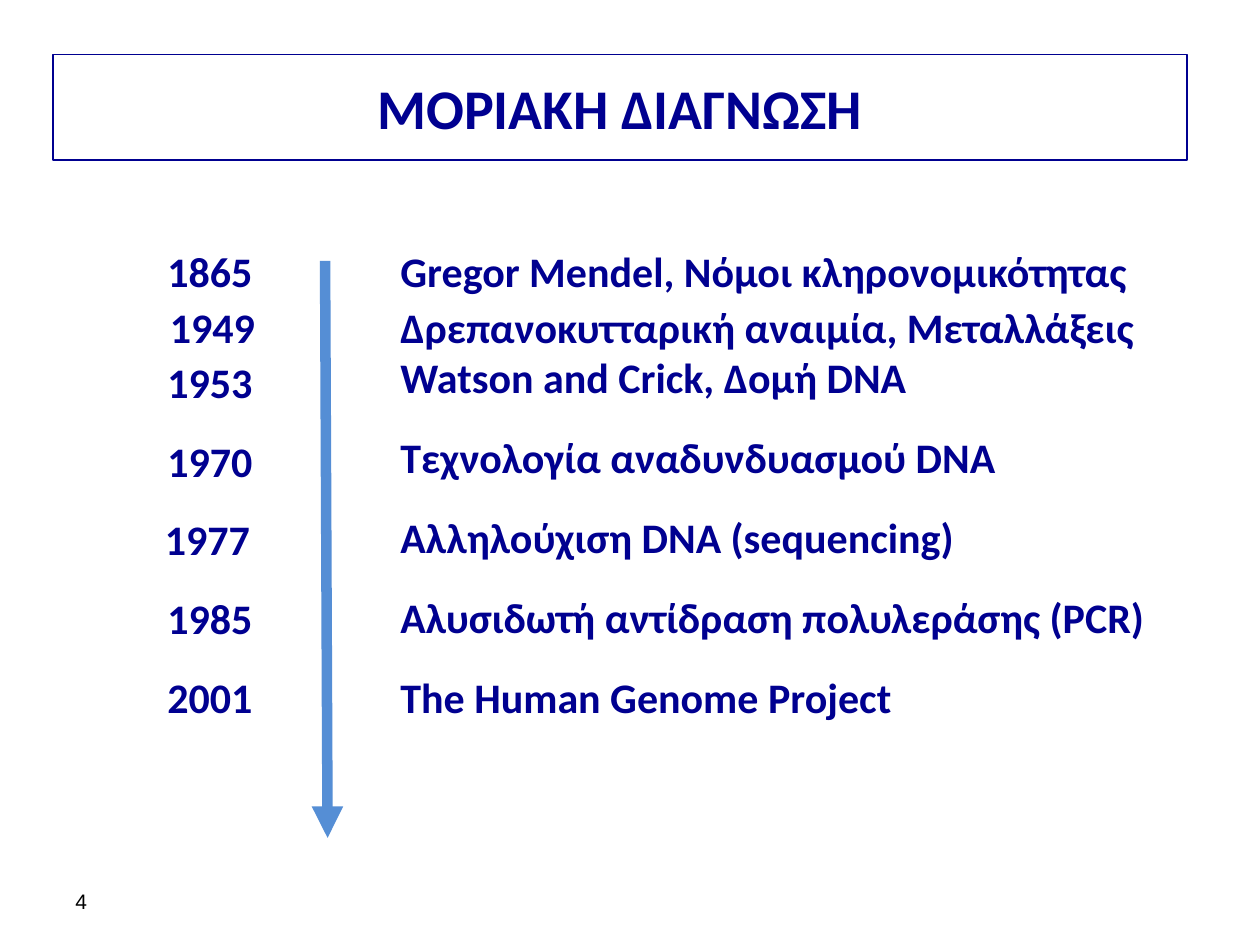
from collections import namedtuple
from lxml import etree
from pptx import Presentation
from pptx.dml.color import RGBColor
from pptx.enum.shapes import MSO_CONNECTOR
from pptx.enum.text import MSO_ANCHOR, MSO_AUTO_SIZE, PP_ALIGN
from pptx.oxml.ns import qn
from pptx.util import Inches, Pt

Theme = namedtuple("Theme", "navy blue black font number_font title entry number")
theme = Theme(RGBColor(0x00, 0x00, 0x90), RGBColor(0x55, 0x8E, 0xD5), RGBColor(0, 0, 0),
              "Calibri", "Arial", Pt(32), Pt(24), Pt(12))

deck = Presentation()
deck.slide_width, deck.slide_height = Inches(10), Inches(7.5)
slide = deck.slides.add_slide(deck.slide_layouts[5])


def write(paragraph, words, size, color=theme.navy, font=theme.font, bold=True):
    run = paragraph.add_run()
    run.text = words
    run.font.size, run.font.name, run.font.bold = size, font, bold
    run.font.color.rgb = color


def add_label(left, top, width, height=0.5):
    frame = slide.shapes.add_textbox(Inches(left), Inches(top), Inches(width), Inches(height)).text_frame
    frame.word_wrap = True
    return frame


page_number = add_label(0.5, 6.95, 2.33, 0.4)
page_number.vertical_anchor = MSO_ANCHOR.MIDDLE
write(page_number.paragraphs[0], "4", theme.number, theme.black, theme.number_font, False)

heading = slide.shapes.title
heading.left, heading.top = Inches(0.42), Inches(0.43)
heading.width, heading.height = Inches(9), Inches(0.84)
heading.line.color.rgb = theme.navy
heading.line.width = Pt(0.75)
heading.text_frame.auto_size = MSO_AUTO_SIZE.NONE
heading.text_frame.vertical_anchor = MSO_ANCHOR.MIDDLE
heading.text_frame.paragraphs[0].alignment = PP_ALIGN.CENTER
write(heading.text_frame.paragraphs[0], "ΜΟΡΙΑΚΗ ΔΙΑΓΝΩΣΗ", theme.title)

time_arrow = slide.shapes.add_connector(
    MSO_CONNECTOR.STRAIGHT, Inches(2.58), Inches(2.07), Inches(2.6), Inches(6.65))
time_arrow.line.color.rgb = theme.blue
time_arrow.line.width = Pt(6)
etree.SubElement(time_arrow.line._get_or_add_ln(), qn("a:tailEnd"), type="triangle")
etree.SubElement(time_arrow._element.spPr, qn("a:effectLst"))

milestones = [
    ("1865", "Gregor Mendel, Νόμοι κληρονομικότητας", 0),
    ("1949", "Δρεπανοκυτταρική αναιμία, Μεταλλάξεις", 0.02),
    ("1953", "Watson and Crick, Δομή DNA", 0),
    ("1970", "Τεχνολογία αναδυνδυασμού DNA", 0),
    ("1977", "Αλληλούχιση DNA (sequencing)", -0.02),
    ("1985", "Αλυσιδωτή αντίδραση πολυλεράσης (PCR)", 0),
    ("2001", "The Human Genome Project", 0),
]
year_column, event_column = 1.23, 3.08
first_row, last_row, tight_pitch, tight_rows = 1.9, 5.28, 0.44, 2
year_pitch, event_pitch = 0.625, 0.635

for row, (year, event, year_shift) in enumerate(milestones):
    rows_below = len(milestones) - 1 - row
    if row < tight_rows:
        year_top = event_top = first_row + row * tight_pitch
    else:
        year_top = last_row - rows_below * year_pitch
        event_top = last_row - rows_below * event_pitch
    write(add_label(year_column + year_shift, year_top, 0.96).paragraphs[0], year, theme.entry)
    write(add_label(event_column, event_top, 6.63).paragraphs[0], event, theme.entry)

deck.save("out.pptx")
